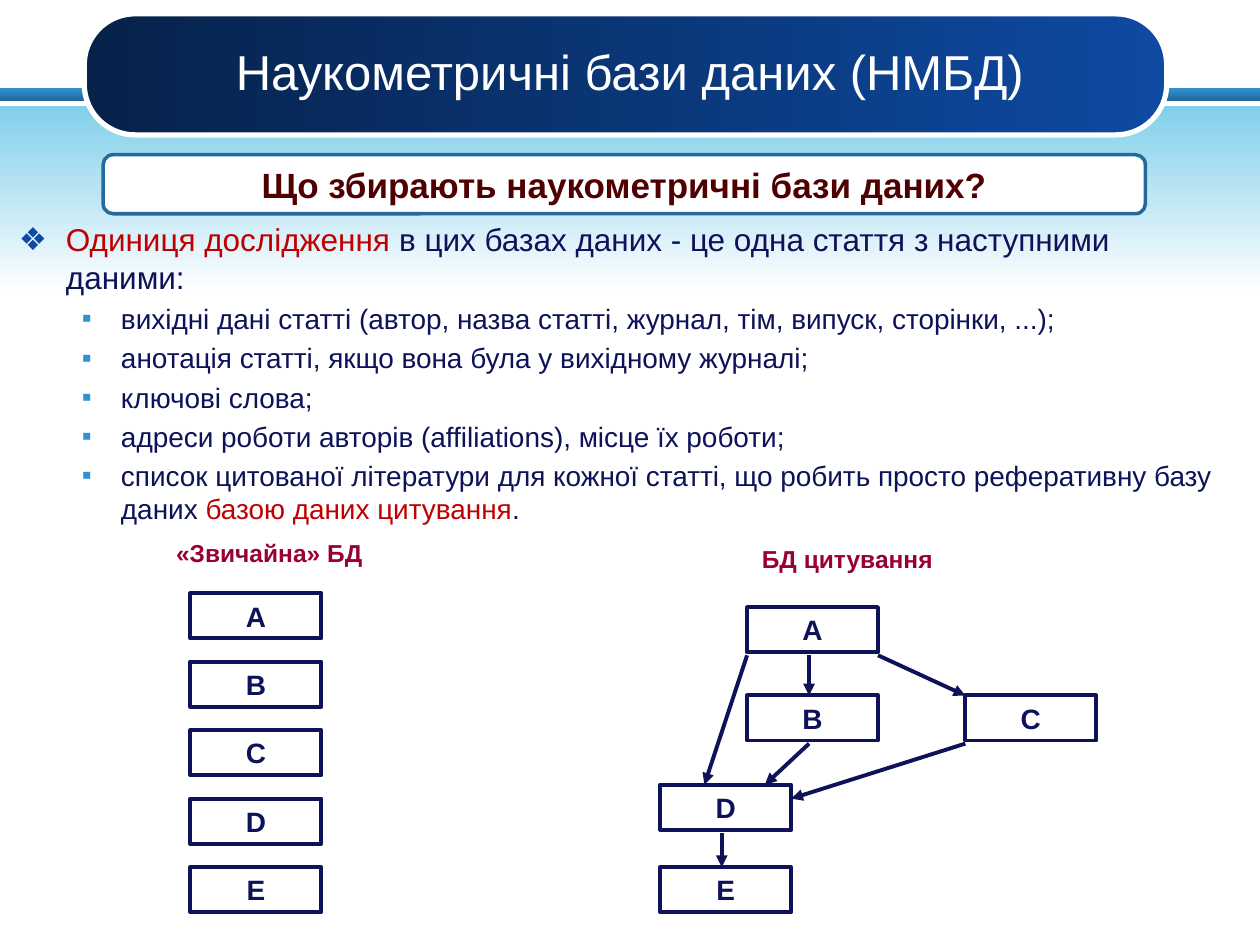
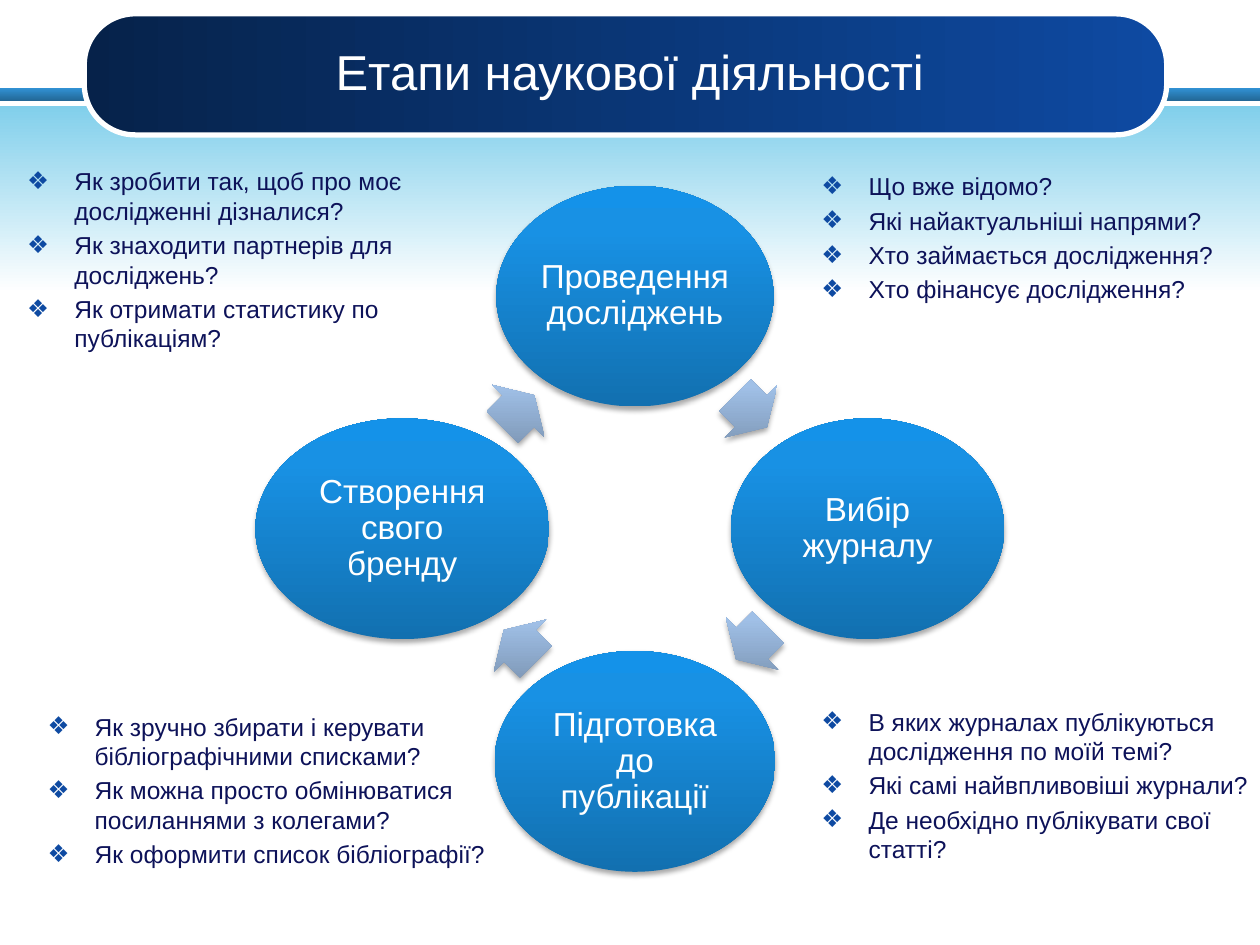
from copy import deepcopy
from lxml import etree
from pptx import Presentation
from pptx.dml.color import RGBColor
from pptx.enum.shapes import MSO_CONNECTOR, MSO_SHAPE
from pptx.enum.text import MSO_ANCHOR, PP_ALIGN
from pptx.oxml.ns import qn
from pptx.util import Cm, Pt

RECT, ROUND = MSO_SHAPE.RECTANGLE, MSO_SHAPE.ROUNDED_RECTANGLE
OVAL, ARROW = MSO_SHAPE.OVAL, MSO_SHAPE.RIGHT_ARROW
LINE = MSO_CONNECTOR.STRAIGHT
TOP, MID = MSO_ANCHOR.TOP, MSO_ANCHOR.MIDDLE
LEFT, MIDDLE = PP_ALIGN.LEFT, PP_ALIGN.CENTER

HUES = {
    "white": "FFFFFF", "ink": "0D1259", "red": "C00000", "wine": "990033",
    "brown": "500000", "edge": "246B9C", "mark": "0E4AA2", "dot": "3191D3",
}
# Gradients: angle clockwise, then stops of percent and colour
BAND = (90, [(0, "3191D3"), (100, "236897")])
SKY = (90, [(0, "81CFEB"), (100, "FFFFFF")])
PILL = (0, [(0, "06224A"), (100, "0E4AA2")])
BALL = (270, [(0, "1270B0"), (80, "1891E4"), (100, "1492E9")])
STEEL = (270, [(0, "7B94B2"), (80, "A0C0E7"), (100, "A0C0E9")])

# Text styles: font values, then colour, alignment and anchor
HEAD = ({"size": Pt(28)}, "white", MIDDLE, MID)
ASK = ({"size": Pt(20), "bold": True}, "brown", MIDDLE, MID)
LABEL = ({"size": Pt(14), "bold": True}, "wine", LEFT, TOP)
NODE = ({"size": Pt(16), "bold": True}, "ink", MIDDLE, MID)
STAGE = ({"size": Pt(19)}, "white", MIDDLE, MID)
MAIN = ({"size": Pt(18)}, "ink", LEFT, TOP)
SUB = ({"size": Pt(16)}, "ink", LEFT, TOP)
NOTE = ({"size": Pt(14)}, "ink", LEFT, TOP)

# Bullets: sign, colour, left margin, hang
STAR = ("❖", "mark", Cm(0.95), Cm(0.95))
DOT = ("▪", "dot", Cm(2.06), Cm(0.79))


def draw(slide, kind, box, fill=None, line=None, shade=False):
    """Add a shape, or a text box when kind is None; box is in centimetres."""
    place = [Cm(v) for v in box]
    if kind is None:
        shape = slide.shapes.add_textbox(*place)
        shape.text_frame.word_wrap = True
        return shape
    shape = slide.shapes.add_shape(kind, *place)
    shape.shadow.inherit = False
    if fill is None:
        shape.fill.background()
    elif isinstance(fill, str):
        shape.fill.solid()
        shape.fill.fore_color.rgb = RGBColor.from_string(HUES[fill])
    else:
        angle, stops = fill
        shape.fill.gradient()
        shape.fill.gradient_angle = -angle % 360
        grad = shape._element.spPr.find(qn("a:gradFill"))
        grad.set("rotWithShape", "0")
        group = grad.find(qn("a:gsLst"))
        while len(group) < len(stops):
            group.append(deepcopy(group[-1]))
        for stop, (pos, hue) in zip(shape.fill.gradient_stops, stops):
            stop.position = pos / 100
            stop.color.rgb = RGBColor.from_string(hue)
    if line:
        shape.line.color.rgb = RGBColor.from_string(HUES[line[0]])
        shape.line.width = Pt(line[1])
    else:
        shape.line.fill.background()
    if shade:
        glow = etree.SubElement(
            shape._element.spPr.find(qn("a:effectLst")), qn("a:outerShdw"),
            blurRad=str(Pt(3.1)), dist=str(Pt(1.8)), dir="5400000", rotWithShape="0")
        black = etree.SubElement(glow, qn("a:srgbClr"), val="000000")
        etree.SubElement(black, qn("a:alpha"), val="35000")
    return shape


def write(shape, items, style, bullet=None):
    """Fill a shape with paragraphs; an item is a string or (text, colour) runs."""
    values, hue, align, anchor = style
    frame = shape.text_frame
    frame.vertical_anchor = anchor
    for item in items:
        para = frame.paragraphs[0]
        if para.runs:
            para = frame.add_paragraph()
        para.alignment = align
        for text, tint in [(item, hue)] if isinstance(item, str) else item:
            run = para.add_run()
            run.text = text
            run.font.name = "Arial"
            run.font.color.rgb = RGBColor.from_string(HUES[tint])
            for key, value in values.items():
                setattr(run.font, key, value)
        if bullet:
            sign, tint, left, hang = bullet
            para.space_before = Pt(round(values["size"].pt * 0.2, 1))
            props = para._p.get_or_add_pPr()
            props.set("marL", str(left))
            props.set("indent", str(-hang))
            color = etree.SubElement(props, qn("a:buClr"))
            etree.SubElement(color, qn("a:srgbClr"), val=HUES[tint])
            etree.SubElement(props, qn("a:buFont"), typeface="Arial")
            etree.SubElement(props, qn("a:buChar"), char=sign)


deck = Presentation()
deck.slide_width, deck.slide_height = Cm(25.4), Cm(19.05)

# Shared bands and title on both slides
slides = []
for title in ("Наукометричні бази даних (НМБД)", "Етапи наукової діяльності"):
    slide = deck.slides.add_slide(deck.slide_layouts[6])
    draw(slide, RECT, (0, 1.78, 25.4, 0.25), BAND)
    draw(slide, RECT, (0, 2.13, 25.4, 3.78), SKY)
    pill = draw(slide, ROUND, (1.7, 0.28, 21.82, 2.44), PILL, ("white", 3))
    pill.adjustments[0] = 0.42
    write(draw(slide, None, (1.9, 0.28, 21.59, 2.31)), [title], HEAD)
    slides.append(slide)
bases, cycle = slides

# Slide 1: question and list of article data
body = draw(bases, None, (0.13, 4.32, 24.79, 5.44))
write(body, [[("Одиниця дослідження ", "red"),
              ("в цих базах даних - це одна стаття з наступними даними:", "ink")]],
      MAIN, STAR)
write(body, [
    "вихідні дані статті (автор, назва статті, журнал, тім, випуск, сторінки, ...);",
    "анотація статті, якщо вона була у вихідному журналі;",
    "ключові слова;",
    "адреси роботи авторів (affiliations), місце їх роботи;",
    [("список цитованої літератури для кожної статті, що робить просто "
      "реферативну базу даних ", "ink"),
     ("базою даних цитування", "red"), (".", "ink")],
], SUB, DOT)
ask = draw(bases, ROUND, (2.08, 3.12, 21.01, 1.19), "white", ("edge", 2))
write(ask, ["Що збирають наукометричні бази даних?"], ASK)

# Plain database on the left, citation database on the right
write(draw(bases, None, (3.3, 10.72, 5, 0.81)), ["«Звичайна» БД"], LABEL)
write(draw(bases, None, (15.11, 10.85, 5.38, 0.81)), ["БД цитування"], LABEL)
nodes = [(name, 3.84, 11.96 + 1.38 * row) for row, name in enumerate("ABCDE")]
nodes += [("A", 15.06, 12.24), ("B", 15.06, 14.02), ("C", 19.46, 14.02),
          ("D", 13.31, 15.82), ("E", 13.31, 17.48)]
for name, x, y in nodes:
    write(draw(bases, RECT, (x, y, 2.64, 0.91), None, ("ink", 2.25)), [name], NODE)

# Citation arrows
for ends in (
    (16.31, 13.21, 16.31, 14.02),  # A to B
    (17.7, 13.21, 19.46, 14.02),   # A to C
    (15.06, 13.21, 14.2, 15.82),   # A to D
    (16.31, 14.99, 15.42, 15.82),  # B to D
    (19.46, 14.99, 15.95, 16.1),   # C to D
    (14.55, 16.79, 14.55, 17.48),  # D to E
):
    link = bases.shapes.add_connector(LINE, *[Cm(v) for v in ends])
    link.line.color.rgb = RGBColor.from_string(HUES["ink"])
    link.line.width = Pt(2.25)
    etree.SubElement(link.line._get_or_add_ln(), qn("a:tailEnd"), type="triangle")
    etree.SubElement(link._element.spPr, qn("a:effectLst"))

# Slide 2: ring of stages, clockwise from the top
midx, midy, reach, high = 12.8, 10.66, 4.69, 4.45
stages = [("Проведення досліджень", 5.59, 0, -1), ("Вибір журналу", 5.51, 1, 0),
          ("Підготовка до публікації", 5.66, 0, 1), ("Створення свого бренду", 5.92, -1, 0)]
for name, wide, dx, dy in stages:
    x, y = midx + reach * dx - wide / 2, midy + reach * dy - high / 2
    ball = draw(cycle, OVAL, (x, y, wide, high), BALL, shade=True)
    write(ball, [name], STAGE)
    frame = ball.text_frame
    frame.paragraphs[0].line_spacing = 0.9
    for side in ("left", "right", "top", "bottom"):
        setattr(frame, "margin_" + side, Cm(0.08))

# Arrows between the stages
wide, high = 0.91, 1.5
for turn, (x, y) in enumerate([(15.14, 8.29), (15.16, 12.97), (10.48, 13.02), (10.45, 8.29)]):
    arrow = draw(cycle, ARROW, (x - wide / 2, y - high / 2, wide, high), STEEL, shade=True)
    arrow.adjustments[0] = 0.6
    arrow.rotation = 45 + 90 * turn

# Questions in the four corners
for box, lines in (
    ((16.31, 3.33, 8.41, 4.19), [
        "Що вже відомо?", "Які найактуальніші напрями?",
        "Хто займається дослідження?", "Хто фінансує дослідження?"]),
    ((16.31, 14.12, 9.6, 3.1), [
        "В яких журналах публікуються дослідження по моїй темі?",
        "Які самі найвпливовіші журнали?",
        "Де необхідно публікувати свої статті?"]),
    ((0.71, 14.22, 9.4, 3.48), [
        "Як зручно збирати і керувати бібліографічними списками?",
        "Як можна просто обмінюватися посиланнями з колегами?",
        "Як оформити список бібліографії?"]),
    ((0.3, 3.23, 9.4, 4.6), [
        "Як зробити так, щоб про моє дослідженні дізналися?",
        "Як знаходити партнерів для досліджень?",
        "Як отримати статистику по публікаціям?"]),
):
    write(draw(cycle, None, box), lines, NOTE, STAR)

deck.save("out.pptx")
